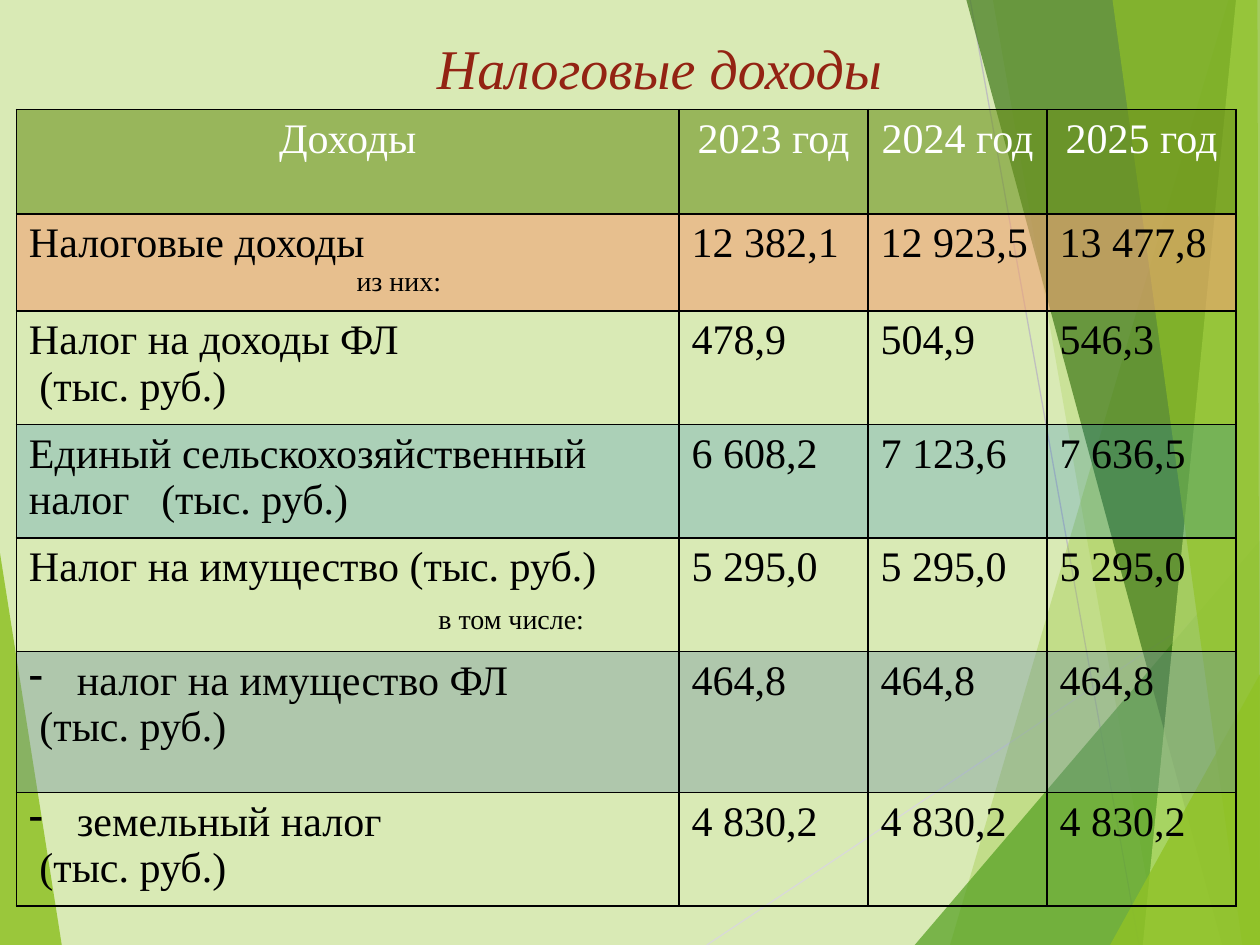
from lxml.etree import SubElement
from pptx import Presentation
from pptx.dml.color import RGBColor
from pptx.enum.shapes import MSO_CONNECTOR
from pptx.enum.text import MSO_ANCHOR, PP_ALIGN
from pptx.oxml import parse_xml
from pptx.oxml.ns import nsdecls, qn
from pptx.util import Inches, Pt

FONT = "Times New Roman"
COLUMNS = [5.26, 1.5, 1.42, 1.5]
ROWS = [0.83, 0.77, 0.9, 0.9, 0.9, 1.12, 0.9]
UNIT = " (тыс. руб.)"

LEFT_FACET = ([(0, 4.39), (0.49, 7.5), (0, 7.5)], "90C226", 85)
RIGHT_FACETS = [
    ([(9.75, 0), (7.54, 7.5), (10, 7.5), (10, 0)], "90C226", 30),
    ([(7.88, 0), (9.19, 7.5), (10, 7.5), (10, 0)], "90C226", 20),
    ([(7.26, 7.5), (10, 4.29), (10, 7.5)], "54A021", 72),
    ([(7.67, 0), (9.7, 7.5), (10, 7.5), (10, 0)], "3F7819", 70),
    ([(9.81, 0), (9.07, 7.5), (10, 7.5), (10, 0)], "C0E474", 70),
    ([(8.83, 0), (9.86, 7.5), (10, 7.5), (9.98, 0)], "90C226", 65),
    ([(8.81, 7.5), (10, 5.35), (10, 7.5)], "90C226", 80),
]

TAX_ROWS = [
    (["Налоговые доходы", "из них:"],
     ["12 382,1", "12 923,5", "13 477,8"], ("F1A374", 60)),
    (["Налог на доходы ФЛ", UNIT], ["478,9", "504,9", "546,3"], None),
    (["Единый сельскохозяйственный налог\t(тыс. руб.)"],
     ["6 608,2", "7 123,6", "7 636,5"], ("0070C0", 21)),
    (["Налог на имущество (тыс. руб.)", "в том числе:"], ["5 295,0"] * 3, None),
    (["- налог на имущество ФЛ", UNIT], ["464,8"] * 3, ("6E91A0", 39)),
    (["- земельный налог", UNIT], ["4 830,2"] * 3, None),
]
NOTES = {"из них:": (2.6, 0), "в том числе:": (3.25, 8)}


def color(value):
    return RGBColor.from_string(value)


def paint(fill, value, opacity):
    fill.solid()
    fill.fore_color.rgb = color(value)
    choice = fill.fore_color._xFill[0]
    SubElement(choice, qn("a:alpha")).set("val", str(opacity * 1000))


def add_facet(page, points, value, opacity):
    corners = [(Inches(x), Inches(y)) for x, y in points]
    builder = page.shapes.build_freeform(*corners[0])
    builder.add_line_segments(corners[1:], close=True)
    facet = builder.convert_to_shape()
    facet.shadow.inherit = False
    paint(facet.fill, value, opacity)
    facet.line.fill.background()


def add_line(page, start, end, value):
    line = page.shapes.add_connector(
        MSO_CONNECTOR.STRAIGHT, *[Inches(place) for place in start + end])
    line.line.color.rgb = color(value)
    line.line.width = Pt(0.75)
    SubElement(line._element.spPr, qn("a:effectLst"))


def add_span(para, text, size, value):
    span = para.add_run()
    span.text = text
    span.font.name = FONT
    span.font.size = Pt(size)
    span.font.color.rgb = color(value)
    return span


def add_title(page, text):
    title = page.shapes.title
    title.left, title.top = Inches(1.06), Inches(0.21)
    title.width, title.height = Inches(8.35), Inches(0.64)
    title.text_frame.vertical_anchor = MSO_ANCHOR.MIDDLE
    para = title.text_frame.paragraphs[0]
    para.alignment = PP_ALIGN.CENTER
    add_span(para, text, 32, "932313").font.italic = True


def indent(para, left, hanging=0):
    properties = para._p.get_or_add_pPr()
    properties.set("marL", str(Inches(left)))
    properties.set("indent", str(-Inches(hanging)))
    return properties


def write_line(para, text, value):
    size = 24
    if text in NOTES:
        left, gap = NOTES[text]
        indent(para, left)
        para.space_before = Pt(gap)
        size = 16
    elif text.startswith("- "):
        properties = indent(para, 0.38, 0.38)
        SubElement(properties, qn("a:buChar")).set("char", "-")
        text = text[2:]
    elif "\t" in text:
        tabs = SubElement(para._p.get_or_add_pPr(), qn("a:tabLst"))
        stop = SubElement(tabs, qn("a:tab"))
        stop.set("pos", str(Inches(1.05)))
        stop.set("algn", "l")
    add_span(para, text, size, value)


def add_borders(cell):
    properties = cell._tc.get_or_add_tcPr()
    for index, side in enumerate("LRTB"):
        properties.insert(index, parse_xml(
            f'<a:ln{side} {nsdecls("a")} w="12700"><a:solidFill>'
            f'<a:srgbClr val="000000"/></a:solidFill></a:ln{side}>'))


def fill_cell(cell, lines, tint, value="000000", alignment=PP_ALIGN.LEFT):
    if tint:
        paint(cell.fill, *tint)
    else:
        cell.fill.background()
    add_borders(cell)
    frame = cell.text_frame
    for index, text in enumerate(lines):
        para = frame.add_paragraph() if index else frame.paragraphs[0]
        para.alignment = alignment
        write_line(para, text, value)


def add_tax_table(page):
    table = page.shapes.add_table(
        len(ROWS), len(COLUMNS), Inches(0.13), Inches(0.87),
        Inches(sum(COLUMNS)), Inches(sum(ROWS))).table
    table.first_row = False
    table.horz_banding = False
    for column, width in zip(table.columns, COLUMNS):
        column.width = Inches(width)
    for row, height in zip(table.rows, ROWS):
        row.height = Inches(height)
    headings = ["Доходы"] + [f"{year} год" for year in (2023, 2024, 2025)]
    for cell, heading in zip(table.rows[0].cells, headings):
        fill_cell(cell, [heading], ("6C921D", 59), "FFFFFF", PP_ALIGN.CENTER)
    for index, (label, amounts, tint) in enumerate(TAX_ROWS, 1):
        contents = [label] + [[amount] for amount in amounts]
        for cell, lines in zip(table.rows[index].cells, contents):
            fill_cell(cell, lines, tint)


def main():
    deck = Presentation()
    deck.slide_width, deck.slide_height = Inches(10), Inches(7.5)
    page = deck.slides.add_slide(deck.slide_layouts[5])
    page.background.fill.solid()
    page.background.fill.fore_color.rgb = color("D9EAB5")
    add_facet(page, *LEFT_FACET)
    add_line(page, (5.61, 7.5), (10, 4.57), "D9D9D9")
    add_line(page, (7.7, 0), (9.04, 7.5), "BFBFBF")
    for facet in RIGHT_FACETS:
        add_facet(page, *facet)
    add_title(page, "Налоговые доходы")
    add_tax_table(page)
    deck.save("out.pptx")


if __name__ == "__main__":
    main()
